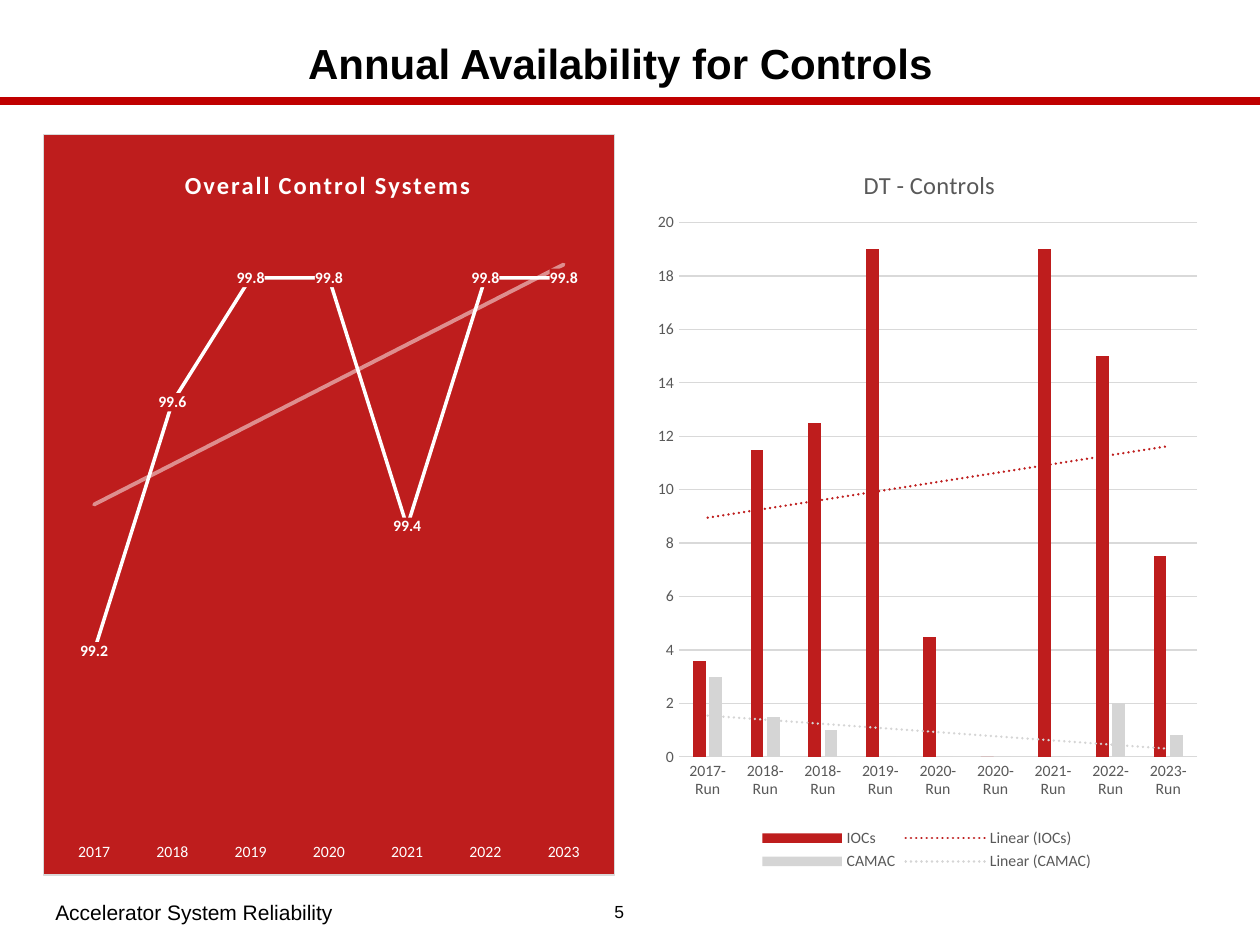
from lxml import etree
from pptx import Presentation
from pptx.chart.data import CategoryChartData
from pptx.dml.color import RGBColor
from pptx.enum import chart as ch, shapes, text
from pptx.oxml import parse_xml
from pptx.oxml.ns import nsdecls, qn
from pptx.util import Inches, Pt

RED, GRAY, WHITE, BLACK = "BE1D1D", "D5D5D5", "FFFFFF", "000000"
RULE, LABEL = "D9D9D9", "595959"


def style(font, size, color, bold=False, name="Calibri"):
    font.size, font.bold, font.name = Pt(size), bold, name
    font.color.rgb = RGBColor.from_string(color)


def place(parent, x, y, w=None, h=None):
    """Give a chart title or plot area a manual layout in chart fractions."""
    for old in parent.findall(qn("c:layout")):
        parent.remove(old)
    sizes = f'<c:w val="{w}"/><c:h val="{h}"/>' if w else ""
    target = '<c:layoutTarget val="inner"/>' if w else ""
    layout = parse_xml(
        f'<c:layout {nsdecls("c")}><c:manualLayout>{target}'
        '<c:xMode val="edge"/><c:yMode val="edge"/>'
        f'<c:x val="{x}"/><c:y val="{y}"/>{sizes}</c:manualLayout></c:layout>')
    tx = parent.find(qn("c:tx"))
    if tx is None:
        parent.insert(0, layout)
    else:
        tx.addnext(layout)


prs = Presentation()
prs.slide_width, prs.slide_height = Inches(10), Inches(7.5)
s = prs.slides.add_slide(prs.slide_layouts[5])

# Rule under the title
rule = s.shapes.add_connector(shapes.MSO_CONNECTOR.STRAIGHT,
                              Inches(-0.01), Inches(0.8), Inches(10), Inches(0.8))
rule.line.color.rgb = RGBColor.from_string("C00000")
rule.line.width = Pt(4.5)
etree.SubElement(rule._element.spPr, qn("a:effectLst"))

# Title, footer and page number
title = s.shapes.title
title.left, title.top = Inches(0.34), Inches(0.26)
title.width, title.height = Inches(9.26), Inches(0.53)
footer = s.shapes.add_textbox(Inches(0.34), Inches(7.07), Inches(4.28), Inches(0.34))
number = s.shapes.add_textbox(Inches(4.62), Inches(7.07), Inches(0.59), Inches(0.33))
for sp, words, size, align in (
        (title, "Annual Availability for Controls ", 24, text.PP_ALIGN.CENTER),
        (footer, "Accelerator System Reliability", 12, text.PP_ALIGN.LEFT),
        (number, "5", 10, text.PP_ALIGN.CENTER)):
    tf = sp.text_frame
    tf.text = words
    tf.word_wrap = True
    tf.vertical_anchor = text.MSO_ANCHOR.MIDDLE
    p = tf.paragraphs[0]
    p.alignment = align
    style(p.runs[0].font, size, BLACK, sp is title, "Arial")
title.text_frame.paragraphs[0].line_spacing = 0.9

# Charts
availability = CategoryChartData(number_format="0.0")
availability.categories = [str(year) for year in range(2017, 2024)]
availability.add_series("Series 1", (99.2, 99.6, 99.8, 99.8, 99.4, 99.8, 99.8))

downtime = CategoryChartData(number_format="General")
downtime.categories = [f"{year}-Run" for year in
                       (2017, 2018, 2018, 2019, 2020, 2020, 2021, 2022, 2023)]
downtime.add_series("IOCs", (3.6, 11.5, 12.5, 19, 4.5, 0, 19, 15, 7.5))
downtime.add_series("CAMAC", (3, 1.5, 1, 0, 0, 0, 0, 2, 0.8))

kinds = ch.XL_CHART_TYPE
charts = []
for kind, data, left, width, heading, color, bold, title_x, plot_box, limits in (
        (kinds.LINE, availability, 0.34, 4.54, "Overall Control Systems", WHITE, True,
         0.24, (0.02, 0.11, 0.96, 0.84), (98.9, 99.9)),
        (kinds.COLUMN_CLUSTERED, downtime, 5.12, 4.47, "DT - Controls", LABEL, False,
         0.38, (0.06, 0.12, 0.92, 0.72), (0, 20))):
    chart = s.shapes.add_chart(kind, Inches(left), Inches(1.06),
                               Inches(width), Inches(5.89), data).chart
    charts.append(chart)
    style(chart.font, 10, BLACK)
    chart.has_legend = False
    chart.chart_title.include_in_layout = False
    tf = chart.chart_title.text_frame
    tf.text = heading
    style(tf.paragraphs[0].runs[0].font, 14, color, bold)
    place(chart.chart_title._element, title_x, 0.04)
    place(chart._chartSpace.chart.plotArea, *plot_box)
    chart.plots[0].vary_by_categories = False
    chart.value_axis.minimum_scale, chart.value_axis.maximum_scale = limits
    for axis in (chart.category_axis, chart.value_axis):
        axis.major_tick_mark = axis.minor_tick_mark = ch.XL_TICK_MARK.NONE
        style(axis.tick_labels.font, 9, color)
        axis.format.line.fill.background()

line_chart, bar_chart = charts

# Line chart: red panel, white line, labels that interrupt the line
line_chart._chartSpace.chart.addnext(parse_xml(
    f'<c:spPr {nsdecls("c", "a")}><a:solidFill><a:srgbClr val="{RED}"/></a:solidFill>'
    f'<a:ln w="9525"><a:solidFill><a:srgbClr val="{RULE}"/></a:solidFill></a:ln></c:spPr>'))
line_chart.chart_title.text_frame.paragraphs[0].runs[0].font._element.set("spc", "100")
line_chart.value_axis.visible = False
line_chart.value_axis.has_major_gridlines = False
series = line_chart.plots[0].series[0]
series.smooth = False
series.marker.style = ch.XL_MARKER_STYLE.NONE
series.format.line.color.rgb = RGBColor.from_string(WHITE)
series.format.line.width = Pt(2)
labels = series.data_labels
labels.show_value = True
labels.number_format, labels.number_format_is_linked = "0.0", False
labels.position = ch.XL_LABEL_POSITION.CENTER
style(labels.font, 9, WHITE, True)
labels._element.find(qn("c:txPr")).addprevious(parse_xml(
    f'<c:spPr {nsdecls("c", "a")}><a:solidFill><a:srgbClr val="{RED}"/></a:solidFill></c:spPr>'))

# Column chart: grid, legend and series colours
bar_chart.plots[0].gap_width, bar_chart.plots[0].overlap = 219, -27
bar_chart.value_axis.major_unit = 2
bar_chart.value_axis.tick_labels.number_format = "General"
for line in (bar_chart.value_axis.major_gridlines.format.line,
             bar_chart.category_axis.format.line):
    line.color.rgb = RGBColor.from_string(RULE)
    line.width = Pt(0.75)
bar_chart.has_legend = True
bar_chart.legend.position = ch.XL_LEGEND_POSITION.BOTTOM
bar_chart.legend.include_in_layout = False
style(bar_chart.legend.font, 9, LABEL)
bars = bar_chart.plots[0].series
for column, color in zip(bars, (RED, GRAY)):
    column.format.fill.solid()
    column.format.fill.fore_color.rgb = RGBColor.from_string(color)

# Linear trend lines
for ser, color, width, dash, alpha in ((series, WHITE, 2.25, "solid", 50),
                                       (bars[0], RED, 1.5, "sysDot", 100),
                                       (bars[1], GRAY, 1.5, "sysDot", 100)):
    ser._element.find(qn("c:cat")).addprevious(parse_xml(
        f'<c:trendline {nsdecls("c", "a")}><c:spPr><a:ln w="{Pt(width)}" cap="rnd">'
        f'<a:solidFill><a:srgbClr val="{color}"><a:alpha val="{alpha * 1000}"/></a:srgbClr>'
        f'</a:solidFill><a:prstDash val="{dash}"/></a:ln></c:spPr>'
        '<c:trendlineType val="linear"/><c:dispRSqr val="0"/><c:dispEq val="0"/>'
        '</c:trendline>'))

prs.save("out.pptx")
